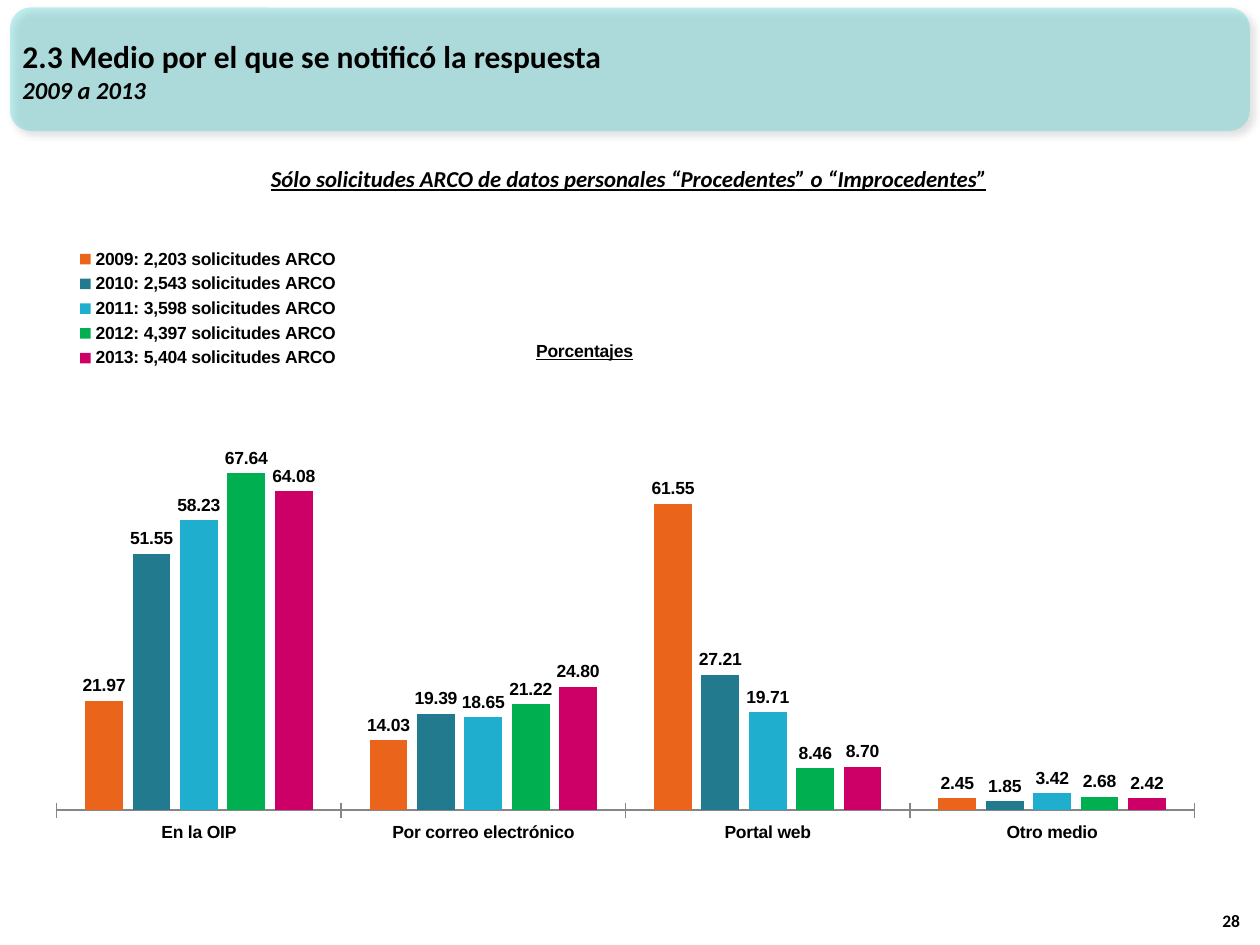
from typing import NamedTuple, Optional

from lxml import etree
from pptx import Presentation
from pptx.chart.data import CategoryChartData
from pptx.dml.color import RGBColor
from pptx.enum import chart as ch, shapes, text
from pptx.oxml import parse_xml
from pptx.oxml.ns import nsdecls, qn
from pptx.util import Inches, Pt

BLACK = RGBColor(0x00, 0x00, 0x00)
TURQUOISE = RGBColor(0x33, 0xCC, 0xCC)
GRAY = RGBColor(0x86, 0x86, 0x86)
ORANGE = RGBColor(0xEB, 0x64, 0x1B)
TEAL = RGBColor(0x22, 0x7A, 0x8F)
SKY = RGBColor(0x1F, 0xAE, 0xCD)
GREEN = RGBColor(0x00, 0xB0, 0x50)
MAGENTA = RGBColor(0xCC, 0x00, 0x66)
NUMBER_FORMAT = "#,##0.00"


class Box(NamedTuple):
    left: float
    top: float
    width: float = 0
    height: float = 0

    def emu(self) -> list:
        return [Inches(v) for v in self]


class Line(NamedTuple):
    text: str
    size: float
    italic: bool = False
    underline: bool = False


class Year(NamedTuple):
    name: str
    values: tuple
    color: RGBColor


CHART = Box(0.2, 1.47, 9.53, 5.66)
# Places inside the chart, in inches from its top left corner
PLOT = Box(0.25, 1.8, 9.03, 3.16)
LEGEND = Box(0.35, 0.47, 2.2, 1.02)
TITLE = Box(4.03, 1.2)

CATEGORIES = ("En la OIP", "Por correo electrónico", "Portal web", "Otro medio")
YEARS = (
    Year("2009: 2,203 solicitudes ARCO", (21.97, 14.03, 61.55, 2.45), ORANGE),
    Year("2010: 2,543 solicitudes ARCO", (51.55, 19.39, 27.21, 1.85), TEAL),
    Year("2011: 3,598 solicitudes ARCO", (58.23, 18.65, 19.71, 3.42), SKY),
    Year("2012: 4,397 solicitudes ARCO", (67.64, 21.22, 8.46, 2.68), GREEN),
    Year("2013: 5,404 solicitudes ARCO", (64.08, 24.80, 8.70, 2.42), MAGENTA),
)


def format_font(font, *, size: float, name: str, italic: bool = False,
                underline: bool = False) -> None:
    font.name, font.size, font.bold = name, Pt(size), True
    font.italic, font.underline = italic, underline
    font.color.rgb = BLACK


def add_text(slide, box: Box, *lines: Line, align=text.PP_ALIGN.LEFT,
             anchor=text.MSO_ANCHOR.TOP):
    tf = slide.shapes.add_textbox(*box.emu()).text_frame
    tf.word_wrap = True
    tf.vertical_anchor = anchor
    for i, line in enumerate(lines):
        p = tf.paragraphs[0] if i == 0 else tf.add_paragraph()
        p.alignment = align
        r = p.add_run()
        r.text = line.text
        format_font(r.font, size=line.size, name="Calibri",
                    italic=line.italic, underline=line.underline)
    return tf


def add_banner(slide, box: Box) -> None:
    """Translucent rounded band with a soft shadow to the lower right."""
    sp = slide.shapes.add_shape(shapes.MSO_SHAPE.ROUNDED_RECTANGLE, *box.emu())
    sp.fill.solid()
    sp.fill.fore_color.rgb = TURQUOISE
    sp.line.fill.background()
    color = sp.fill._xPr.find(".//" + qn("a:srgbClr"))
    etree.SubElement(color, qn("a:alpha"), val="30000")
    sp.shadow.inherit = False
    effects = sp._element.spPr.find(qn("a:effectLst"))
    effects.append(parse_xml(
        f'<a:outerShdw {nsdecls("a")} blurRad="{Pt(4)}" dist="{Pt(3)}" '
        'dir="2700000" algn="tl" rotWithShape="0"><a:srgbClr val="000000">'
        '<a:alpha val="40000"/></a:srgbClr></a:outerShdw>'))


def place(element, box: Box, after: Optional[str] = None,
          inner: bool = False) -> None:
    """Give a chart part a manual layout; a zero size is left automatic."""
    for old in element.findall(qn("c:layout")):
        element.remove(old)
    target = '<c:layoutTarget val="inner"/>' if inner else ""
    modes = '<c:xMode val="edge"/><c:yMode val="edge"/>'
    whole = (CHART.width, CHART.height) * 2
    sizes = "".join(f'<c:{k} val="{v / total}"/>'
                    for k, v, total in zip("xywh", box, whole) if v)
    layout = parse_xml(f'<c:layout {nsdecls("c")}><c:manualLayout>{target}'
                       f'{modes}{sizes}</c:manualLayout></c:layout>')
    if after:
        element.find(qn(after)).addnext(layout)
    else:
        element.insert(0, layout)


def add_answer_chart(slide) -> None:
    data = CategoryChartData(number_format=NUMBER_FORMAT)
    data.categories = CATEGORIES
    for year in YEARS:
        data.add_series(year.name, year.values)
    chart = slide.shapes.add_chart(
        ch.XL_CHART_TYPE.COLUMN_CLUSTERED, *CHART.emu(), data).chart
    format_font(chart.font, size=10, name="Arial")

    chart.has_title = True
    p = chart.chart_title.text_frame.paragraphs[0]
    r = p.add_run()
    r.text = "Porcentajes"
    format_font(r.font, size=10, name="Arial", underline=True)
    place(chart.chart_title._element, TITLE, after="c:tx")

    chart.has_legend = True
    chart.legend.position = ch.XL_LEGEND_POSITION.TOP
    chart.legend.include_in_layout = False
    place(chart.legend._element, LEGEND, after="c:legendPos")

    plot = chart.plots[0]
    plot.gap_width, plot.overlap = 150, -25
    plot.vary_by_categories = False
    for series, year in zip(plot.series, YEARS):
        series.format.fill.solid()
        series.format.fill.fore_color.rgb = year.color
        series.invert_if_negative = False
        labels = series.data_labels
        labels.show_value = True
        labels.number_format = NUMBER_FORMAT
        labels.number_format_is_linked = False
        labels.position = ch.XL_LABEL_POSITION.OUTSIDE_END
    place(chart._chartSpace.chart.plotArea, PLOT, inner=True)

    axis = chart.category_axis
    axis.major_tick_mark = ch.XL_TICK_MARK.CROSS
    axis.format.line.color.rgb = GRAY
    axis.format.line.width = Pt(0.75)
    values = chart.value_axis
    values.minimum_scale, values.maximum_scale = 0, 80
    values.has_major_gridlines = False
    values.visible = False


def main() -> None:
    prs = Presentation()
    prs.slide_width, prs.slide_height = Inches(10), Inches(7.5)
    s = prs.slides.add_slide(prs.slide_layouts[6])
    add_banner(s, Box(0.08, 0.06, 9.84, 0.98))
    add_text(s, Box(0.08, 0.09, 9.17, 0.94),
             Line("2.3 Medio por el que se notificó la respuesta", 18),
             Line("2009 a 2013", 14, italic=True),
             anchor=text.MSO_ANCHOR.MIDDLE)
    add_text(s, Box(9.54, 7.04, 0.4, 0.4), Line("28", 10),
             align=text.PP_ALIGN.RIGHT, anchor=text.MSO_ANCHOR.BOTTOM)
    tf = add_text(s, Box(1.52, 1.26, 6.94, 0.32),
                  Line("Sólo solicitudes ARCO de datos personales “Procedentes” "
                       "o “Improcedentes”", 13, italic=True, underline=True),
                  align=text.PP_ALIGN.CENTER)
    tf.auto_size = text.MSO_AUTO_SIZE.SHAPE_TO_FIT_TEXT
    add_answer_chart(s)
    prs.save("out.pptx")


if __name__ == "__main__":
    main()
